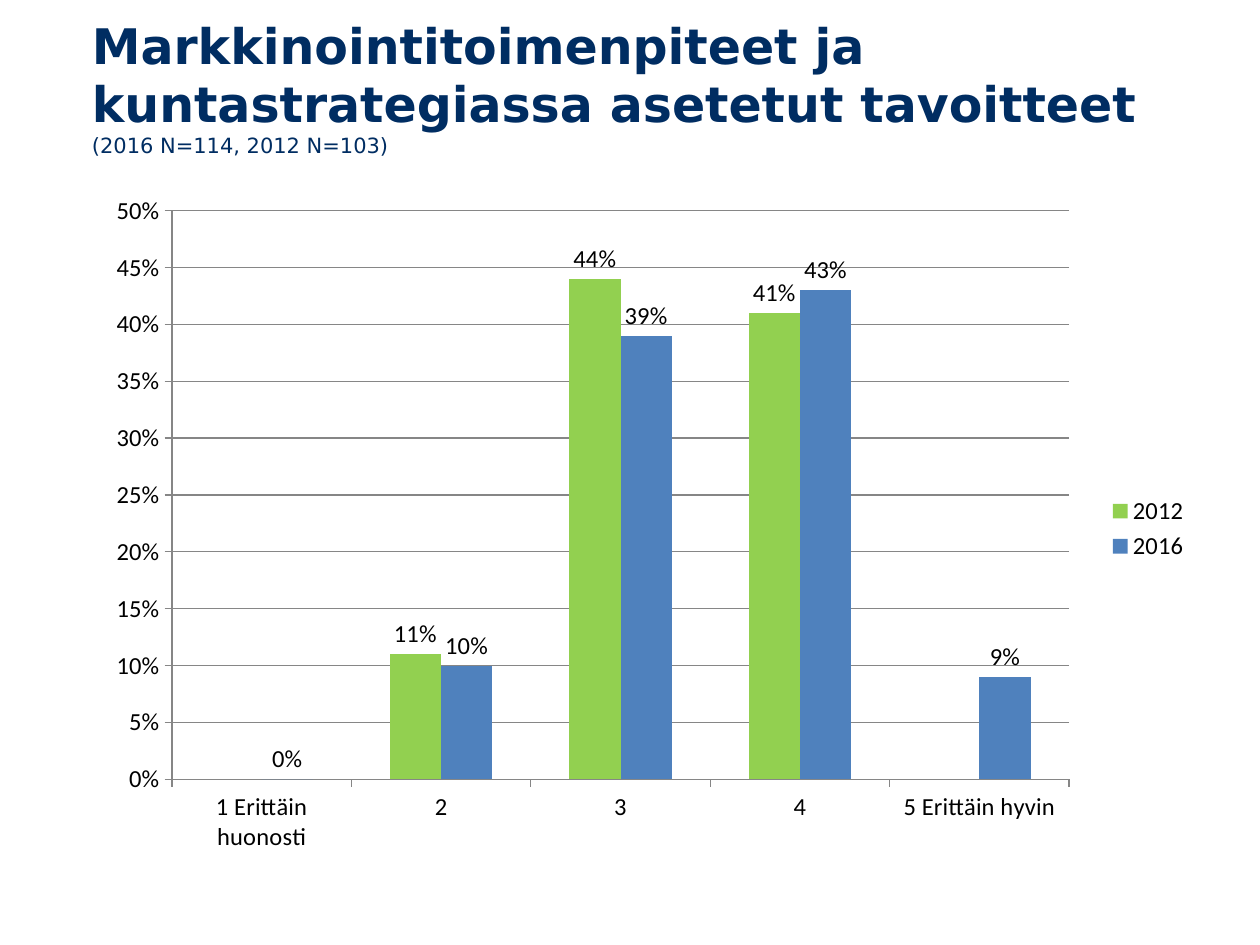
from lxml import etree
from pptx import Presentation
from pptx import util as u
from pptx.chart.data import CategoryChartData
from pptx.dml.color import RGBColor
from pptx.enum import chart as ch, text
from pptx.oxml.ns import qn

WIDTH, HEIGHT = u.Inches(10), u.Inches(7.5)
NAVY, BLACK, GREY = "002D62", "000000", "868686"
RATINGS = ["1 Erittäin huonosti", "2", "3", "4", "5 Erittäin hyvin"]
YEARS = [
    ("2012", "92D050", [None, 0.11, 0.44, 0.41, None]),
    ("2016", "4F81BD", [0, 0.1, 0.39, 0.43, 0.09]),
]
PLOT_AREA = {"x": 0.07, "y": 0.032, "w": 0.81, "h": 0.837}


def paint(color_format, hex_color):
    color_format.rgb = RGBColor.from_string(hex_color)


def share(left, top, width, height):
    return [int(part * side) for part, side in
            zip((left, top, width, height), (WIDTH, HEIGHT) * 2)]


def add_heading(slide, heading, sample):
    frame = slide.shapes.add_textbox(*share(0.073, 0.013, 0.853, 0.157)).text_frame
    frame.word_wrap = True
    frame.vertical_anchor = text.MSO_ANCHOR.MIDDLE
    frame.margin_left = frame.margin_right = 0
    frame.margin_top = frame.margin_bottom = 0
    paragraph = frame.paragraphs[0]
    paragraph.font.name = "DejaVu Sans"
    paint(paragraph.font.color, NAVY)
    for words, size, bold in ((heading, 28, True), (sample, 12, False)):
        run = paragraph.add_run()
        run.text = words
        run.font.size = u.Pt(size)
        run.font.bold = bold


def place_plot(chart):
    plot_area = chart._chartSpace.chart.plotArea
    for layout in plot_area.findall(qn("c:layout")):
        plot_area.remove(layout)
    layout = etree.Element(qn("c:layout"))
    plot_area.insert(0, layout)
    manual = etree.SubElement(layout, qn("c:manualLayout"))
    settings = {"layoutTarget": "inner", "xMode": "edge", "yMode": "edge", **PLOT_AREA}
    for tag, value in settings.items():
        etree.SubElement(manual, qn("c:" + tag)).set("val", str(value))


def style_axes(chart):
    for axis in (chart.category_axis, chart.value_axis):
        axis.major_tick_mark = ch.XL_TICK_MARK.OUTSIDE
        axis.minor_tick_mark = ch.XL_TICK_MARK.NONE
        paint(axis.format.line.color, GREY)
    scale = chart.value_axis
    scale.minimum_scale, scale.maximum_scale, scale.major_unit = 0, 0.5, 0.05
    scale.tick_labels.number_format = "0%"
    scale.tick_labels.number_format_is_linked = False
    scale.has_major_gridlines = True
    paint(scale.major_gridlines.format.line.color, GREY)


def style_bars(series, hex_color):
    series.format.fill.solid()
    paint(series.format.fill.fore_color, hex_color)
    series.invert_if_negative = False
    labels = series.data_labels
    labels.show_value = True
    labels.number_format = "0%"
    labels.number_format_is_linked = False
    labels.position = ch.XL_LABEL_POSITION.OUTSIDE_END


def add_ratings_chart(slide):
    data = CategoryChartData(number_format="0%")
    data.categories = RATINGS
    for year, _, shares in YEARS:
        data.add_series(year, shares)
    chart = slide.shapes.add_chart(
        ch.XL_CHART_TYPE.COLUMN_CLUSTERED, *share(0.075, 0.2, 0.879, 0.719), data).chart
    chart.has_title = False
    chart.font.name = "Calibri"
    chart.font.size = u.Pt(14)
    paint(chart.font.color, BLACK)
    chart.has_legend = True
    chart.legend.position = ch.XL_LEGEND_POSITION.RIGHT
    chart.legend.include_in_layout = False
    bars = chart.plots[0]
    bars.gap_width, bars.overlap, bars.vary_by_categories = 150, 0, False
    for series, (_, hex_color, _) in zip(bars.series, YEARS):
        style_bars(series, hex_color)
    style_axes(chart)
    place_plot(chart)


def main():
    deck = Presentation()
    deck.slide_width, deck.slide_height = WIDTH, HEIGHT
    slide = deck.slides.add_slide(deck.slide_layouts[6])
    add_heading(slide, "Markkinointitoimenpiteet ja kuntastrategiassa asetetut tavoitteet ",
                "(2016 N=114, 2012 N=103)")
    add_ratings_chart(slide)
    deck.save("out.pptx")


if __name__ == "__main__":
    main()
